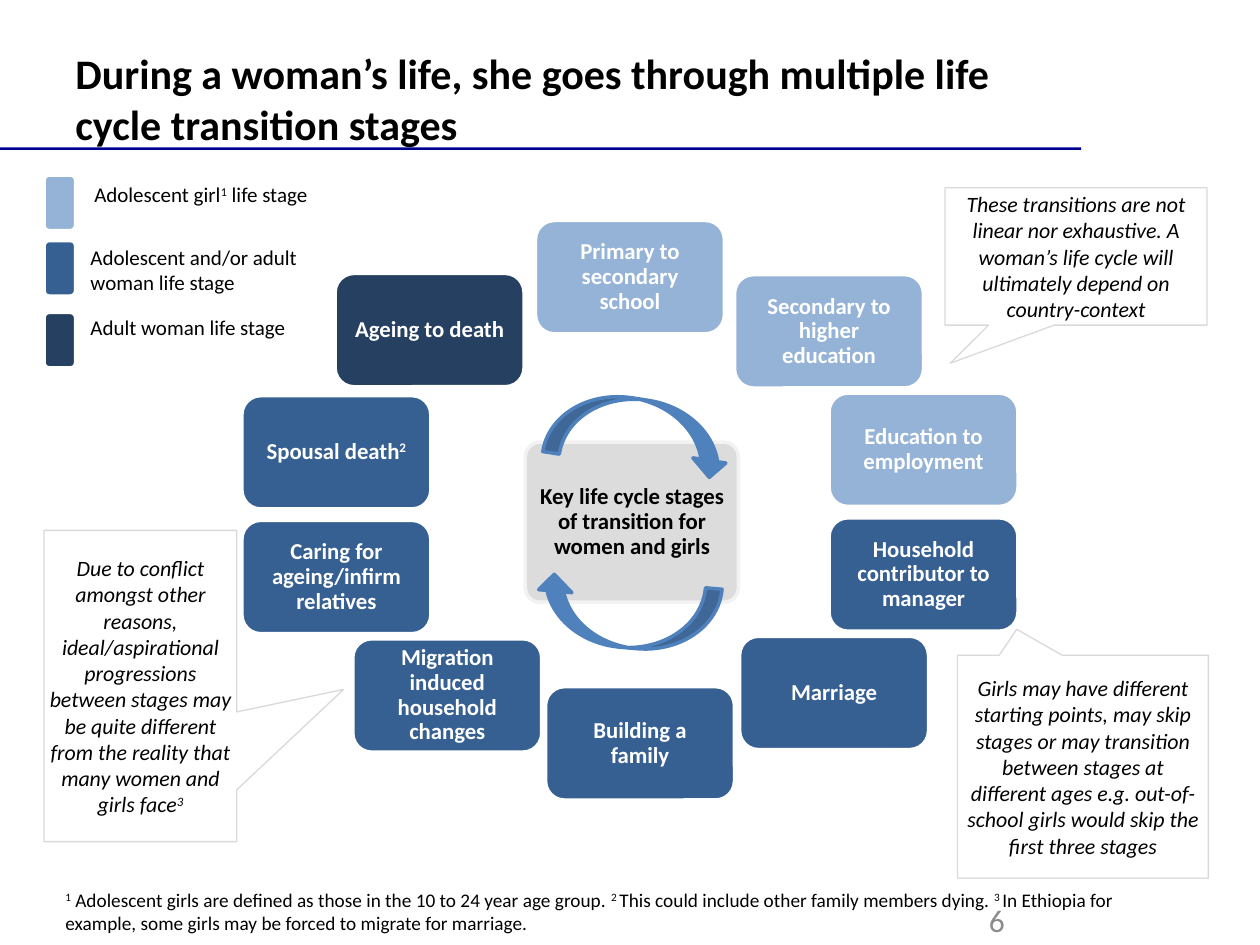
import pptx
import pptx.dml.color
import pptx.enum.shapes
import pptx.enum.text
import pptx.oxml
import pptx.oxml.ns
import pptx.util

Inches = pptx.util.Inches
Pt = pptx.util.Pt
Shapes = pptx.enum.shapes.MSO_SHAPE
Anchor = pptx.enum.text.MSO_ANCHOR
Align = pptx.enum.text.PP_ALIGN

FONT = "Calibri"
GIRL, MIXED, ADULT = "95B3D7", "376092", "254061"
STAGE_WIDTH, STAGE_HEIGHT = 1.5, 0.9

STAGES = [
    ("Primary to secondary school", 4.25, 1.75, GIRL),
    ("Secondary to higher education", 5.83, 2.18, GIRL),
    ("Education to employment", 6.58, 3.12, GIRL),
    ("Household contributor to manager", 6.58, 4.11, MIXED),
    ("Marriage", 5.87, 5.05, MIXED),
    ("Building a family", 4.33, 5.45, MIXED),
    ("Migration induced household changes", 2.8, 5.07, MIXED),
    ("Caring for ageing/infirm relatives", 1.92, 4.13, MIXED),
    ("Spousal death^2^", 1.92, 3.14, MIXED),
    ("Ageing to death", 2.66, 2.17, ADULT),
]

# label, label left, label top, swatch top, colour
LEGEND = [
    ("Adolescent girl^1^ life stage", 0.65, 1.39, 1.39, GIRL),
    ("Adolescent and/or adult woman life stage", 0.62, 1.89, 1.91, MIXED),
    ("Adult woman life stage", 0.62, 2.45, 2.48, ADULT),
]

# text, box, pointer adjustments
CALLOUTS = [
    ("These transitions are not linear nor exhaustive. A woman’s life cycle "
     "will ultimately depend on country-context",
     (7.5, 1.49, 2.08, 1.09), (-0.48, 0.778)),
    ("Girls may have different starting points, may skip stages or may "
     "transition between stages at different ages e.g. out-of-school girls "
     "would skip the first three stages",
     (7.6, 5.2, 1.99, 1.77), (-0.264, -0.616)),
    ("Due to conflict amongst other reasons, ideal/aspirational progressions "
     "between stages may be quite different from the reality that many women "
     "and girls face^3^",
     (0.35, 4.21, 1.53, 2.47), (1.054, 0.011)),
]

# box, rotation
CYCLE_ARROWS = [
    ((4.34, 3.17, 1.47, 0.53), 8.8),
    ((4.24, 4.61, 1.47, 0.53), 185.1),
]


def color(hex_string):
    return pptx.dml.color.RGBColor.from_string(hex_string)


def set_opacity(fill, percent):
    """Make a solid fill partly transparent."""
    color_element = fill._xPr.find(".//" + pptx.oxml.ns.qn("a:srgbClr"))
    alpha = pptx.oxml.parse_xml(
        f'<a:alpha {pptx.oxml.ns.nsdecls("a")} val="{percent * 1000}"/>')
    color_element.append(alpha)


def write_text(shape, text, size, hex_color="000000", bold=False, italic=False,
               align=Align.LEFT, anchor=Anchor.TOP, inset=None, spacing=None):
    """Fill a shape with one paragraph; parts between ^ marks are superscript."""
    frame = shape.text_frame
    frame.word_wrap = True
    frame.vertical_anchor = anchor
    if inset is not None:
        frame.margin_left = frame.margin_right = Inches(inset)
        frame.margin_top = frame.margin_bottom = Inches(inset)
    paragraph = frame.paragraphs[0]
    paragraph.alignment = align
    if spacing:
        paragraph.line_spacing = spacing
    for index, part in enumerate(text.split("^")):
        if not part:
            continue
        run = paragraph.add_run()
        run.text = part
        run.font.name = FONT
        run.font.size = Pt(size)
        run.font.bold = bold
        run.font.italic = italic
        run.font.color.rgb = color(hex_color)
        if index % 2:
            run.font._element.set("baseline", "30000")


def add_text(slide, text, box, size, **style):
    text_box = slide.shapes.add_textbox(*map(Inches, box))
    write_text(text_box, text, size, **style)


def add_shape(slide, kind, box, fill=None, line=None, line_width=2,
              adjustments=()):
    shape = slide.shapes.add_shape(kind, *map(Inches, box))
    shape.shadow.inherit = False
    if fill:
        shape.fill.solid()
        shape.fill.fore_color.rgb = color(fill)
    else:
        shape.fill.background()
    if line:
        shape.line.color.rgb = color(line)
        shape.line.width = Pt(line_width)
    else:
        shape.line.fill.background()
    for index, value in enumerate(adjustments):
        shape.adjustments[index] = value
    return shape


def add_legend_entry(slide, label, left, top, swatch_top, fill):
    add_shape(slide, Shapes.ROUNDED_RECTANGLE, (0.35, swatch_top, 0.25, 0.44),
              fill, "FFFFFF", adjustments=[0.16])
    add_text(slide, label, (left, top, 2.2, 0.48), 12)


def add_stage(slide, text, left, top, fill):
    stage = add_shape(slide, Shapes.ROUNDED_RECTANGLE,
                      (left, top, STAGE_WIDTH, STAGE_HEIGHT), fill, "FFFFFF")
    write_text(stage, text, 13, "FFFFFF", bold=True, align=Align.CENTER,
               anchor=Anchor.MIDDLE, inset=0.09, spacing=0.9)


def add_center(slide):
    center = add_shape(slide, Shapes.ROUNDED_RECTANGLE,
                       (4.17, 3.51, 1.69, 1.27), "D9D9D9", "F2F2F2",
                       adjustments=[0.09])
    set_opacity(center.fill, 90)
    write_text(center, "Key life cycle stages of transition for women and girls",
               13, bold=True, align=Align.CENTER, anchor=Anchor.MIDDLE,
               inset=0.08, spacing=0.9)


def add_callout(slide, text, box, pointer):
    callout = add_shape(slide, Shapes.RECTANGULAR_CALLOUT, box, line="D9D9D9",
                        line_width=0.75, adjustments=pointer)
    write_text(callout, text, 12.5, italic=True, align=Align.CENTER,
               anchor=Anchor.MIDDLE, inset=0.04)


def add_cycle_arrow(slide, box, rotation):
    arrow = add_shape(slide, Shapes.CURVED_DOWN_ARROW, box, "4F81BD", "4F81BD")
    arrow.rotation = rotation


def main():
    presentation = pptx.Presentation()
    presentation.slide_width = Inches(10)
    presentation.slide_height = Inches(7.5)
    slide = presentation.slides.add_slide(presentation.slide_layouts[6])

    add_shape(slide, Shapes.RECTANGLE, (0, 1.17, 8.58, 0.02), "000090")
    add_text(slide, "During a woman’s life, she goes through multiple life "
             "cycle transition stages", (0.5, 0.33, 8.08, 0.67), 24, bold=True)
    for entry in LEGEND:
        add_legend_entry(slide, *entry)
    add_center(slide)
    for stage in STAGES:
        add_stage(slide, *stage)
    for arrow in CYCLE_ARROWS:
        add_cycle_arrow(slide, *arrow)
    for callout in CALLOUTS:
        add_callout(slide, *callout)
    add_text(slide, "^1^ Adolescent girls are defined as those in the 10 to 24 "
             "year age group. ^2 ^This could include other family members "
             "dying. ^3 ^In Ethiopia for example, some girls may be forced to "
             "migrate for marriage.", (0.42, 7, 8.92, 0.27), 11)
    add_text(slide, "6", (7.75, 7.1, 2.25, 0.4), 18, hex_color="8C8C8C")

    presentation.save("out.pptx")


if __name__ == "__main__":
    main()
